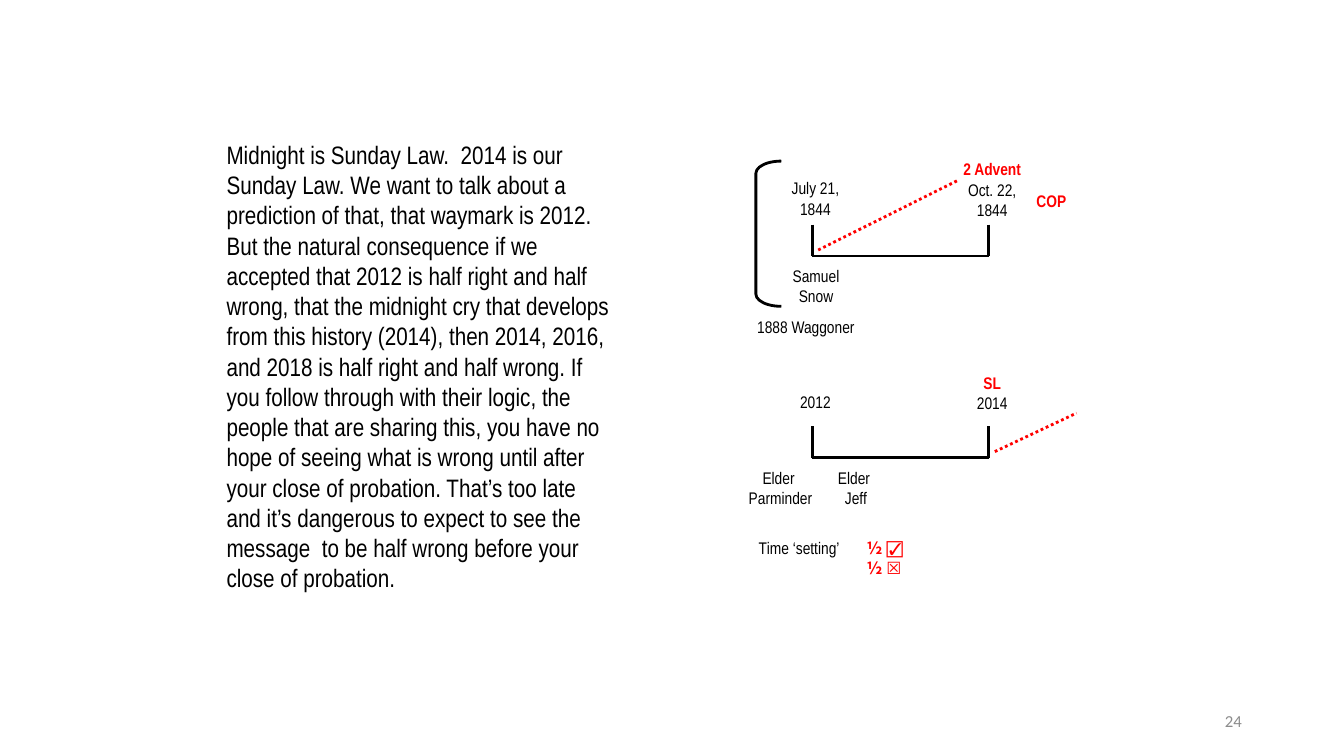
from dataclasses import dataclass

from lxml import etree
from pptx import Presentation
from pptx.dml.color import RGBColor
from pptx.enum.dml import MSO_LINE
from pptx.enum.shapes import MSO_CONNECTOR, MSO_SHAPE
from pptx.enum.text import MSO_ANCHOR, PP_ALIGN
from pptx.oxml.ns import qn
from pptx.util import Cm, Pt

STRAIGHT = MSO_CONNECTOR.STRAIGHT
LEFT_BRACKET = MSO_SHAPE.LEFT_BRACKET
DOTTED = MSO_LINE.ROUND_DOT
LEFT, CENTER, RIGHT = PP_ALIGN.LEFT, PP_ALIGN.CENTER, PP_ALIGN.RIGHT
TOP, MIDDLE = MSO_ANCHOR.TOP, MSO_ANCHOR.MIDDLE


@dataclass(frozen=True)
class Theme:
    """Colours, fonts and type sizes of the slide."""

    black: RGBColor = RGBColor(0x00, 0x00, 0x00)
    red: RGBColor = RGBColor(0xFF, 0x00, 0x00)
    grey: RGBColor = RGBColor(0x8C, 0x8C, 0x8C)
    narrow: str = "Arial Narrow"
    number: str = "Calibri"
    fraction: str = "Noto Sans CJK JP"
    symbol: str = "Arial"
    body_size: int = 18
    label_size: int = 12
    line_width: int = 2


THEME = Theme()
TIMELINE_START, TIMELINE_END, TICK_HEIGHT = 20.47, 24.92, 0.79

STORY = (
    "Midnight is Sunday Law.  2014 is our Sunday Law. We want to talk about a "
    "prediction of that, that waymark is 2012. But the natural consequence if we "
    "accepted that 2012 is half right and half wrong, that the midnight cry that "
    "develops from this history (2014), then 2014, 2016, and 2018 is half right "
    "and half wrong. If you follow through with their logic, the people that are "
    "sharing this, you have no hope of seeing what is wrong until after your close "
    "of probation. That’s too late and it’s dangerous to expect to see the "
    "message  to be half wrong before your close of probation."
)

LABELS = [
    ((19.84, 4.39, 1.42, 1.27), "July 21, 1844"),
    ((19.69, 6.6, 1.75, 1.27), "Samuel Snow"),
    ((18.72, 7.87, 3.18, 0.79), "1888 Waggoner"),
    ((19.84, 9.78, 1.42, 0.97), "2012"),
    ((18.72, 11.68, 1.9, 1.57), "Elder \nParminder"),
    ((20.62, 11.68, 1.9, 1.57), "Elder \nJeff"),
    ((18.72, 13.44, 2.84, 0.79), "Time ‘setting’"),
]

WAYMARKS = [
    ((24.13, 3.91, 1.75, 1.75), "2 Advent\nOct. 22, 1844"),
    ((24.13, 9.3, 1.75, 1.42), "SL\n2014"),
    ((25.86, 4.7, 1.27, 0.97), "COP"),
]


def style_run(run, size, color, font, bold=False):
    """Give a run its size, colour, typeface and weight."""
    run.font.size = Pt(size)
    run.font.color.rgb = color
    run.font.name = font
    run.font.bold = bold


def add_text(slide, place, text, size=THEME.label_size, color=THEME.black,
             font=THEME.narrow, align=CENTER, anchor=TOP, insets=(0.1, 0.1)):
    """Add a wrapped text box in one style and return its paragraphs."""
    box = slide.shapes.add_textbox(*map(Cm, place))
    frame = box.text_frame
    frame.word_wrap = True
    frame.vertical_anchor = anchor
    frame.margin_left = frame.margin_right = Cm(insets[0])
    frame.margin_top = frame.margin_bottom = Cm(insets[1])
    frame.text = text
    for paragraph in frame.paragraphs:
        paragraph.alignment = align
        for run in paragraph.runs:
            style_run(run, size, color, font)
    return frame.paragraphs


def add_waymark(slide, place, text):
    """Add a label whose first line is bold red."""
    heading = add_text(slide, place, text)[0]
    style_run(heading.runs[0], THEME.label_size, THEME.red, THEME.narrow, True)


def add_verdict(slide, place, marks):
    """Add one line per mark, each starting with a bold half."""
    halves = add_text(slide, place, "\n".join("½ " for _ in marks), align=LEFT)
    for half, mark in zip(halves, marks):
        style_run(half.runs[0], THEME.label_size, THEME.red, THEME.fraction, True)
        symbol = half.add_run()
        symbol.text = mark
        style_run(symbol, THEME.label_size, THEME.red, THEME.symbol)


def add_line(slide, start, end, color=THEME.black, dash=None):
    """Add a straight line without shadow."""
    line = slide.shapes.add_connector(STRAIGHT, *map(Cm, start + end))
    line.line.color.rgb = color
    line.line.width = Pt(THEME.line_width)
    if dash:
        line.line.dash_style = dash
    properties = line._element.find(qn("p:spPr"))
    etree.SubElement(properties, qn("a:effectLst"))


def add_timeline(slide, base):
    """Add a base line with an upright tick at both ends."""
    add_line(slide, (TIMELINE_START, base), (TIMELINE_END, base))
    for tick in (TIMELINE_START, TIMELINE_END):
        add_line(slide, (tick, base - TICK_HEIGHT), (tick, base))


def add_bracket(slide, place):
    """Add an unfilled left bracket."""
    bracket = slide.shapes.add_shape(LEFT_BRACKET, *map(Cm, place))
    bracket.adjustments[0] = 0.48
    bracket.shadow.inherit = False
    bracket.fill.background()
    bracket.line.color.rgb = THEME.black
    bracket.line.width = Pt(THEME.line_width)


def main():
    """Build the slide and save it."""
    deck = Presentation()
    deck.slide_width, deck.slide_height = Cm(33.87), Cm(19.05)
    slide = deck.slides.add_slide(deck.slide_layouts[6])

    add_text(slide, (23.93, 17.65, 7.62, 1.02), "24", color=THEME.grey,
             font=THEME.number, align=RIGHT, anchor=MIDDLE, insets=(0.25, 0.13))
    add_text(slide, (5.46, 3.38, 10.24, 12.32), STORY, size=THEME.body_size,
             align=LEFT, insets=(0.25, 0.13))

    for base in (6.45, 11.53):
        add_timeline(slide, base)
    add_bracket(slide, (19.05, 4.06, 0.64, 3.66))

    for place, text in LABELS:
        add_text(slide, place, text)
    for place, text in WAYMARKS:
        add_waymark(slide, place, text)
    add_verdict(slide, (21.74, 13.44, 1.42, 1.9), "☑☒")

    add_line(slide, (20.62, 6.3), (24.13, 4.55), THEME.red, DOTTED)
    add_line(slide, (25.07, 11.38), (27.13, 10.41), THEME.red, DOTTED)

    deck.save("out.pptx")


if __name__ == "__main__":
    main()
